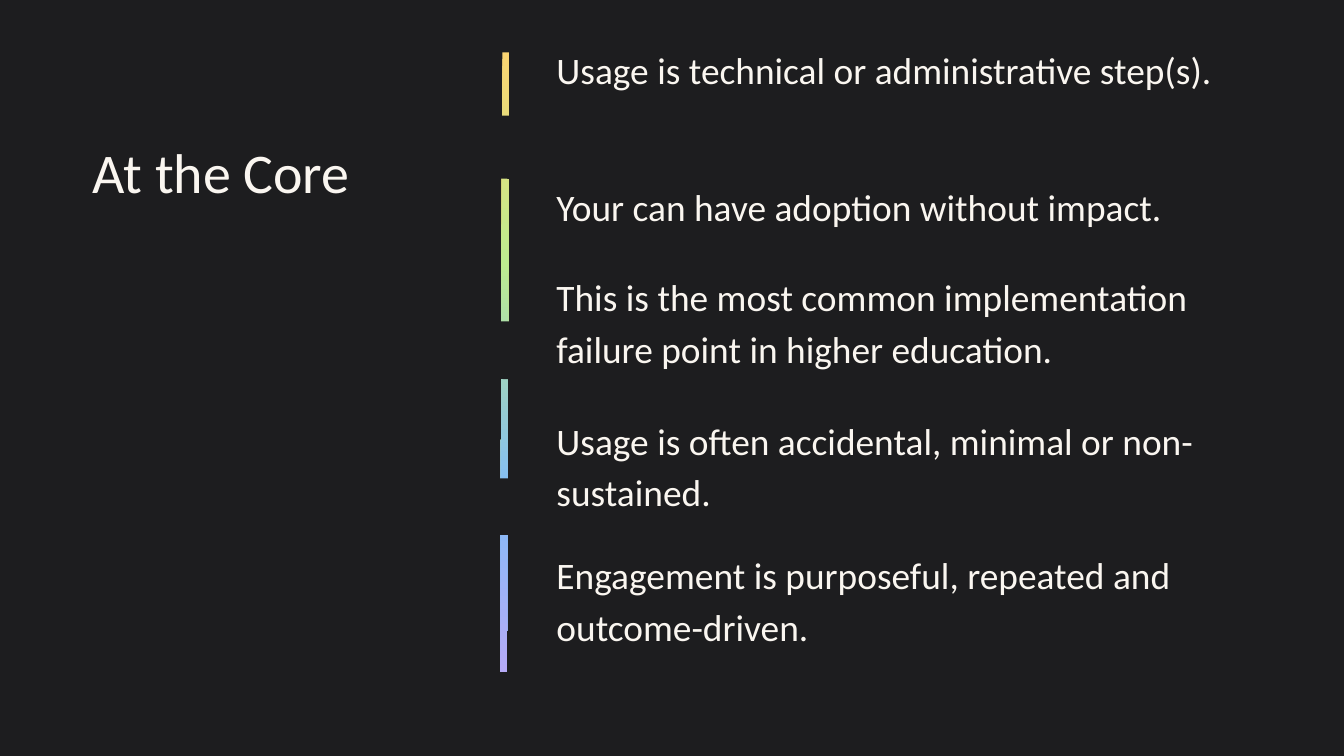
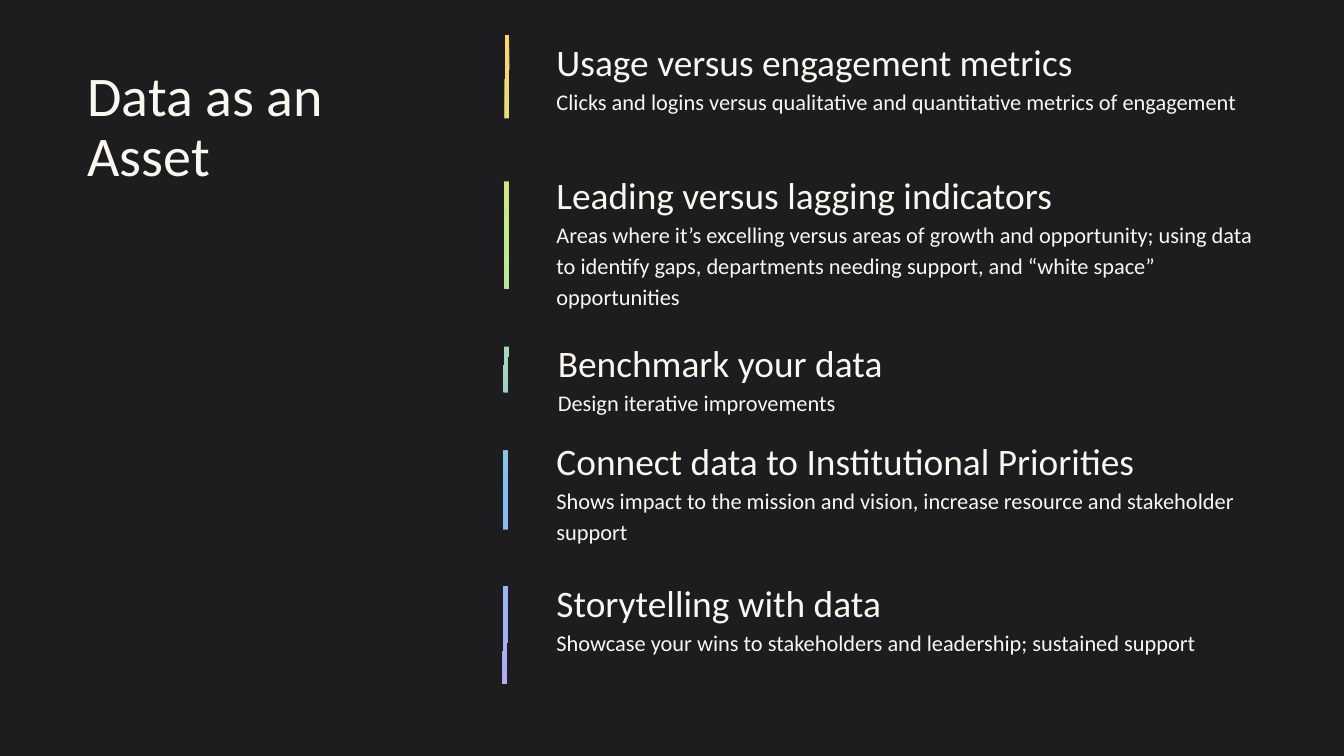
from copy import deepcopy

from pptx import Presentation
from pptx.dml.color import RGBColor
from pptx.enum import shapes, text
from pptx.oxml.ns import qn
from pptx.util import Inches, Pt

DARK = RGBColor(0x1D, 0x1D, 0x1F)
CREAM = RGBColor(0xFA, 0xF6, 0xF0)
STOPS = [
    (0, RGBColor(0xFB, 0xD5, 0x72)),
    (0.34, RGBColor(0xBD, 0xEC, 0x90)),
    (0.71, RGBColor(0x82, 0xBC, 0xF6)),
    (1, RGBColor(0xB6, 0xAB, 0xF7)),
]
FONT = "Calibri"
WIDTH = Inches(10)
HEIGHT = WIDTH * 9 // 16
INDENT = 0.04
TILT = 0.2
LEFT = 4.1
WIDE = 5.42
TALL = 0.95

CORE = {
    "title": ("At the Core", (0.58, 0.84, 2.76, 0.79), 1.15, INDENT),
    "items": [
        ((LEFT, 0.3, 5.38, TALL), ["Usage is technical or administrative step(s)."]),
        ((LEFT, 1.32, WIDE, TALL), ["Your can have adoption without impact."]),
        ((LEFT, 1.99, WIDE, TALL),
         ["This is the most common implementation failure point in higher education."]),
        ((LEFT, 3.06, WIDE, TALL),
         ["Usage is often accidental, minimal or non-sustained."]),
        ((LEFT, 4.06, WIDE, TALL),
         ["Engagement is purposeful, repeated and outcome-driven."]),
    ],
    "bar": (1.45, 2.67, 4.61, 0.05),
    "gaps": [(3.41, 0.86, 0.67, 0.47), (3.42, 2.39, 0.67, 0.43),
             (3.42, 3.56, 0.67, 0.42)],
}
ASSET = {
    "title": ("Data as an Asset", (0.58, 0.56, 2.82, 0.79), 0.9, 0),
    "items": [
        ((LEFT, 0.24, 5.38, TALL),
         ["Usage versus engagement metrics",
          "Clicks and logins versus qualitative and quantitative metrics of engagement"]),
        ((LEFT, 1.23, WIDE, TALL),
         ["Leading versus lagging indicators",
          "Areas where it’s excelling versus areas of growth and opportunity; using data "
          "to identify gaps, departments needing support, and “white space” opportunities"]),
        ((4.11, 2.48, 5.62, TALL),
         ["Benchmark your data", "Design iterative improvements"]),
        ((LEFT, 3.21, WIDE, TALL),
         ["Connect data to Institutional Priorities",
          "Shows impact to the mission and vision, increase resource and stakeholder "
          "support"]),
        ((LEFT, 4.27, 5.62, TALL),
         ["Storytelling with data",
          "Showcase your wins to stakeholders and leadership; sustained support"]),
    ],
    "bar": (1.35, 2.66, 4.83, 0.03),
    "gaps": [(3.41, 0.88, 0.67, 0.47), (3.43, 2.15, 0.67, 0.43),
             (3.41, 3.94, 0.67, 0.42), (3.41, 2.92, 0.67, 0.43)],
}


def apply(obj, **vals):
    for name, val in vals.items():
        setattr(obj, name, val)


def place(shape, box):
    for name, val in zip(("left", "top", "width", "height"), box):
        setattr(shape, name, Inches(val))


def frame(shape, pads, anchor):
    """Set insets (left, top, right, bottom), wrap and anchor."""
    left, top, right, bottom = map(Inches, pads)
    apply(shape.text_frame, margin_left=left, margin_top=top, margin_right=right,
          margin_bottom=bottom, word_wrap=True, vertical_anchor=anchor,
          auto_size=text.MSO_AUTO_SIZE.NONE)


def write(para, words, size, spacing=1.15, indent=INDENT):
    apply(para, alignment=text.PP_ALIGN.LEFT, line_spacing=spacing,
          space_before=Pt(0), space_after=Pt(0))
    props = para._p.get_or_add_pPr()
    props.set("marL", str(Inches(indent)))
    props.set("indent", "0")
    run = para.add_run()
    run.text = words
    apply(run.font, name=FONT, size=Pt(size))
    run.font.color.rgb = CREAM


def add_title(slide, words, box, spacing, indent):
    title = slide.shapes.title
    place(title, box)
    frame(title, (0.07, 0.04, 0.07, 0.04), text.MSO_ANCHOR.MIDDLE)
    write(title.text_frame.paragraphs[0], words, 30, spacing, indent)


def add_item(slide, box, lines):
    """Write a 20 pt head and an optional 12 pt detail."""
    item = slide.shapes.add_textbox(*map(Inches, box))
    frame(item, (0, 0, 0.1, 0), text.MSO_ANCHOR.TOP)
    body = item.text_frame
    for i, (words, size) in enumerate(zip(lines, (20, 12))):
        write(body.add_paragraph() if i else body.paragraphs[0], words, size)


def add_strip(slide, box, turn):
    strip = slide.shapes.add_shape(shapes.MSO_SHAPE.RECTANGLE, *map(Inches, box))
    strip.rotation = turn + TILT
    strip._element.spPr.find(qn("a:xfrm")).set("flipH", "1")
    strip.shadow.inherit = False
    strip.line.fill.background()
    return strip


def add_bar(slide, box):
    """Draw the upright bar that fades through the four accent colours."""
    bar = add_strip(slide, box, 270)
    bar.fill.gradient()
    bar.fill.gradient_angle = 0
    marks = bar._element.spPr.find(qn("a:gradFill")).find(qn("a:gsLst"))
    while len(marks) < len(STOPS):
        marks.append(deepcopy(marks[0]))
    for mark, (pos, color) in zip(bar.fill.gradient_stops, STOPS):
        mark.position = pos
        mark.color.rgb = color


def add_gap(slide, box):
    """Cover part of the bar with the background colour."""
    gap = add_strip(slide, box, 180)
    gap.fill.solid()
    gap.fill.fore_color.rgb = DARK


def add_page(deck, page):
    slide = deck.slides.add_slide(deck.slide_layouts.get_by_name("Title Only"))
    add_title(slide, *page["title"])
    for box, lines in page["items"]:
        add_item(slide, box, lines)
    add_bar(slide, page["bar"])
    for box in page["gaps"]:
        add_gap(slide, box)


def main():
    deck = Presentation()
    apply(deck, slide_width=WIDTH, slide_height=HEIGHT)
    back = deck.slide_master.background.fill
    back.solid()
    back.fore_color.rgb = DARK
    for page in (CORE, ASSET):
        add_page(deck, page)
    deck.save("out.pptx")


if __name__ == "__main__":
    main()
